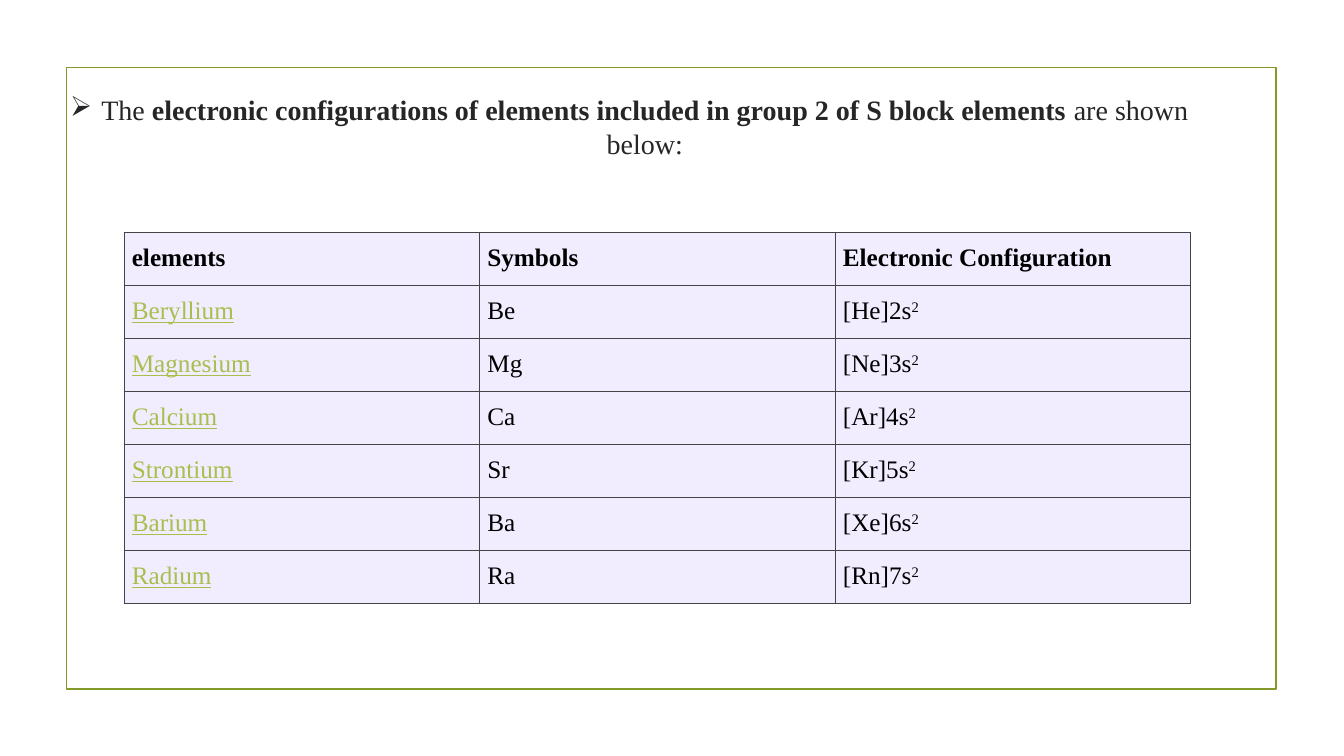
from dataclasses import dataclass

from lxml.etree import SubElement
from pptx import Presentation
from pptx.dml.color import RGBColor
from pptx.enum.shapes import MSO_CONNECTOR, MSO_SHAPE
from pptx.enum.text import MSO_ANCHOR, MSO_AUTO_SIZE, PP_ALIGN
from pptx.oxml import parse_xml
from pptx.oxml.ns import nsdecls, qn
from pptx.util import Inches, Pt

SLIDE_WIDTH, SLIDE_HEIGHT = Inches(13.33), Inches(7.5)


@dataclass(frozen=True)
class Theme:
    font: str = "Times New Roman"
    olive: str = "83992A"
    heading: str = "262626"
    body: str = "000000"
    link: str = "A8BF4D"
    cell: str = "F1EDFF"
    border: str = "444444"
    heading_size: float = 20
    body_size: float = 18
    frame_width: float = 1.25
    border_width: float = 0.38


THEME = Theme()

HEADING = [
    ("The\u00a0".replace("\u00a0", " "), False),
    ("electronic configurations of elements included in group 2 of S block elements", True),
    (" are shown below:", False),
]
COLUMNS = ["elements", "Symbols", "Electronic Configuration"]
ELEMENTS = [
    ("Beryllium", "Be", "[He]2s"),
    ("Magnesium", "Mg", "[Ne]3s"),
    ("Calcium", "Ca", "[Ar]4s"),
    ("Strontium", "Sr", "[Kr]5s"),
    ("Barium", "Ba", "[Xe]6s"),
    ("Radium", "Ra", "[Rn]7s"),
]


def box(left, top, width, height):
    """Turn percentages of the slide into lengths."""
    return (int(SLIDE_WIDTH * left / 100), int(SLIDE_HEIGHT * top / 100),
            int(SLIDE_WIDTH * width / 100), int(SLIDE_HEIGHT * height / 100))


def add_run(paragraph, text, color, size, **formats):
    run = paragraph.add_run()
    run.text = text
    run.font.color.rgb = RGBColor.from_string(color)
    for name, value in {"name": THEME.font, "size": Pt(size), **formats}.items():
        setattr(run.font, name, value)
    return run


def style_line(line):
    line.color.rgb = RGBColor.from_string(THEME.olive)
    line.width = Pt(THEME.frame_width)


def add_frame(slide, area):
    frame = slide.shapes.add_shape(MSO_SHAPE.RECTANGLE, *area)
    frame.shadow.inherit = False
    frame.fill.background()
    style_line(frame.line)


def add_rule(slide, area):
    left, top, width, _ = area
    rule = slide.shapes.add_connector(MSO_CONNECTOR.STRAIGHT, left, top, left + width, top)
    style_line(rule.line)
    SubElement(rule._element.spPr, qn("a:effectLst"))


def fill_heading(slide, area):
    heading = slide.shapes.title
    for name, value in zip(("left", "top", "width", "height"), area):
        setattr(heading, name, value)
    frame = heading.text_frame
    for name, value in {"word_wrap": True, "auto_size": MSO_AUTO_SIZE.NONE,
                        "vertical_anchor": MSO_ANCHOR.MIDDLE}.items():
        setattr(frame, name, value)
    paragraph = frame.paragraphs[0]
    paragraph.alignment = PP_ALIGN.CENTER

    # Arrow bullet with a hanging indent
    properties = paragraph._p.get_or_add_pPr()
    properties.set("marL", str(Inches(0.31)))
    properties.set("indent", str(-Inches(0.31)))
    SubElement(properties, qn("a:buChar")).set("char", "➢")
    for text, bold in HEADING:
        add_run(paragraph, text, THEME.heading, THEME.heading_size, bold=bold)


def style_cell(cell):
    for name, value in {"margin_left": Inches(0.08), "margin_right": Inches(0.08),
                        "margin_top": Inches(0.12), "margin_bottom": Inches(0.12),
                        "vertical_anchor": MSO_ANCHOR.MIDDLE}.items():
        setattr(cell, name, value)
    properties = cell._tc.get_or_add_tcPr()
    for side in ("lnL", "lnR", "lnT", "lnB"):
        properties.append(parse_xml(
            f'<a:{side} {nsdecls("a")} w="{Pt(THEME.border_width)}"><a:solidFill>'
            f'<a:srgbClr val="{THEME.border}"/></a:solidFill></a:{side}>'))
    cell.fill.solid()
    cell.fill.fore_color.rgb = RGBColor.from_string(THEME.cell)


def add_element_table(slide, area):
    width, height = area[2:]
    row_count = len(ELEMENTS) + 1
    table = slide.shapes.add_table(row_count, len(COLUMNS), *area).table
    table.first_row = table.horz_banding = False
    for column in table.columns:
        column.width = width // len(COLUMNS)
    for row in table.rows:
        row.height = height // row_count

    for row_index, values in enumerate([COLUMNS, *ELEMENTS]):
        is_header = row_index == 0
        for column_index, value in enumerate(values):
            cell = table.cell(row_index, column_index)
            style_cell(cell)
            is_element = not is_header and column_index == 0
            paragraph = cell.text_frame.paragraphs[0]
            add_run(paragraph, value, THEME.link if is_element else THEME.body,
                    THEME.body_size, bold=is_header, underline=is_element)
            # Both outer electrons, as a superscript
            if not is_header and column_index == 2:
                electrons = add_run(paragraph, "2", THEME.body, THEME.body_size, bold=False)
                electrons._r.get_or_add_rPr().set("baseline", "30000")


def build_table_slide(presentation):
    slide = presentation.slides.add_slide(presentation.slide_layouts[5])
    add_frame(slide, box(4.95, 8.93, 90.02, 82.27))
    add_rule(slide, box(11.48, 35.33, 77.12, 0))
    fill_heading(slide, box(3.68, 7.07, 86.27, 19.33))
    add_element_table(slide, box(9.21, 30.67, 79.37, 49.07))


def main():
    presentation = Presentation()
    presentation.slide_width, presentation.slide_height = SLIDE_WIDTH, SLIDE_HEIGHT
    build_table_slide(presentation)
    presentation.save("out.pptx")


if __name__ == "__main__":
    main()
